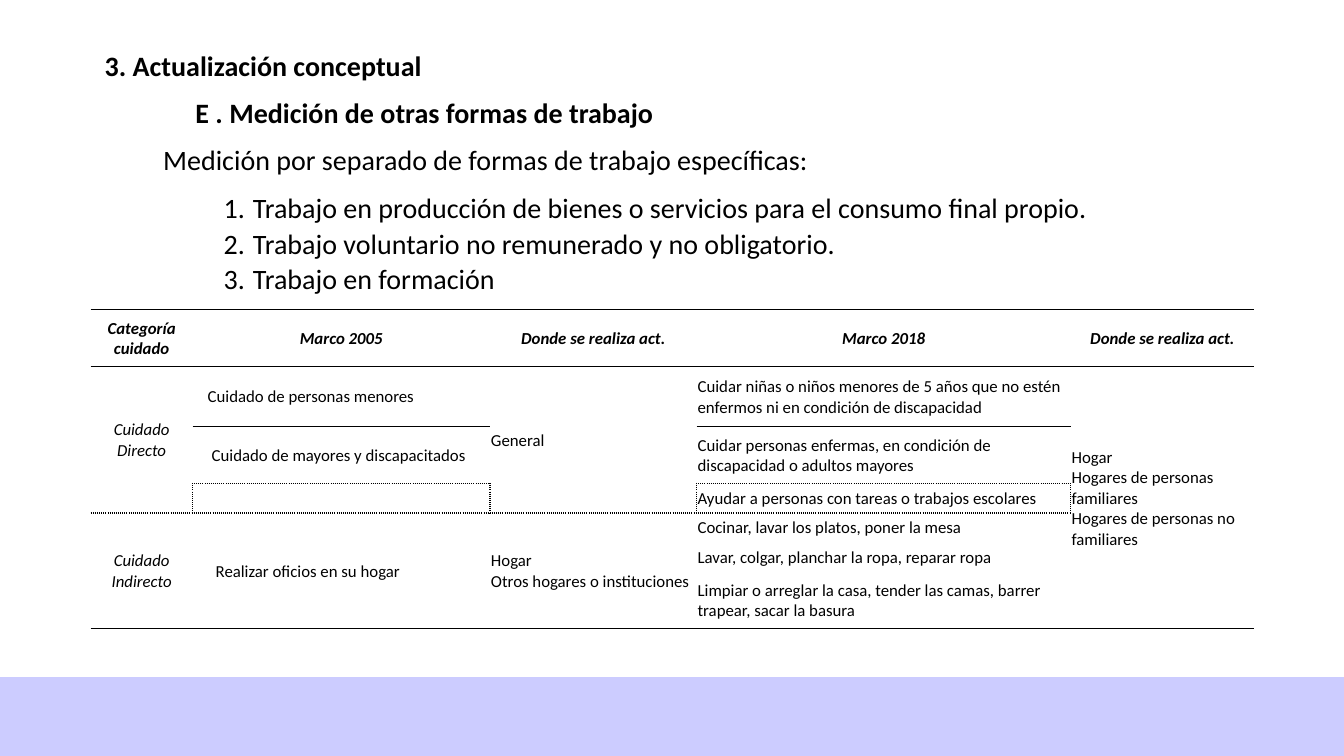
import pptx
import pptx.util
import pptx.dml.color
import pptx.enum.shapes
import pptx.enum.text
import pptx.oxml.ns
from lxml import etree

Inches, Pt = pptx.util.Inches, pptx.util.Pt
ALIGN = pptx.enum.text.PP_ALIGN
BLACK = pptx.dml.color.RGBColor(0x00, 0x00, 0x00)
LAVENDER = pptx.dml.color.RGBColor(0xCC, 0xCC, 0xFF)
FONT = "Calibri"
NO_TABLE_STYLE = "{2D5ABB26-0587-4C30-8999-92F81FD0307C}"
WIDTH, HEIGHT = 13.33, 7.5

# text, bold, left margin, first-line indent, space after, numbered
OUTLINE = [
    ("3. Actualización conceptual", True, 0, 0, 8, False),
    ("E . Medición de otras formas de trabajo", True, 0.9, 0, 8, False),
    ("Medición por separado de formas de trabajo específicas:", False, 0.58, 0, 8, False),
    ("Trabajo en producción de bienes o servicios para el consumo final propio.",
     False, 1.47, -0.29, 0, True),
    ("Trabajo voluntario no remunerado y no obligatorio.", False, 1.47, -0.29, 0, True),
    ("Trabajo en formación", False, 1.47, -0.29, 8, True),
]

COLUMNS = [1.01, 2.95, 2.05, 3.71, 1.82]
ROWS = [0.57, 0.59, 0.57, 0.29, 0.29, 0.29, 0.57]
CELLS = [
    ["Categoría cuidado", "Marco 2005", "Donde se realiza act.", "Marco 2018",
     "Donde se realiza act."],
    ["Cuidado Directo", "Cuidado de personas menores", "General",
     "Cuidar niñas o niños menores de 5 años que no estén enfermos ni en condición de discapacidad",
     "Hogar\nHogares de personas familiares\nHogares de personas no familiares"],
    ["", "Cuidado de mayores y discapacitados", "",
     "Cuidar personas enfermas, en condición de discapacidad o adultos mayores", ""],
    ["", "", "", "Ayudar a personas con tareas o trabajos escolares", ""],
    ["Cuidado Indirecto", "Realizar oficios en su hogar",
     "Hogar\nOtros hogares o instituciones", "Cocinar, lavar los platos, poner la mesa", ""],
    ["", "", "", "Lavar, colgar, planchar la ropa, reparar ropa", ""],
    ["", "", "", "Limpiar o arreglar la casa, tender las camas, barrer trapear, sacar la basura", ""],
]
MERGES = {(1, 0): 3, (1, 2): 3, (1, 4): 6, (4, 0): 3, (4, 1): 3, (4, 2): 3}
LEFT_MARGINS = {(1, 1): 0.15, (2, 1): 0.19, (4, 1): 0.23}
# row boundary, columns, dash
HORIZONTAL_RULES = [
    (0, range(5), "solid"),
    (1, range(5), "solid"),
    (3, (1, 3), "dot"),
    (4, (0, 2), "dot"),
    (7, range(5), "solid"),
]
DOTTED_LEFT = [(3, 1), (3, 3)]


def add_run(paragraph, text, size, bold=False, italic=False):
    run = paragraph.add_run()
    run.text = text
    run.font.name, run.font.size = FONT, Pt(size)
    run.font.bold, run.font.italic = bold, italic
    run.font.color.rgb = BLACK


def add_element(parent, tag, **attributes):
    return etree.SubElement(parent, pptx.oxml.ns.qn(tag), attributes)


def add_footer(slide):
    top = 6.72
    band = slide.shapes.add_shape(
        pptx.enum.shapes.MSO_SHAPE.RECTANGLE,
        0, Inches(top), Inches(WIDTH), Inches(HEIGHT - top))
    band.shadow.inherit = False
    band.fill.solid()
    band.fill.fore_color.rgb = LAVENDER
    band.line.color.rgb = LAVENDER
    band.line.width = Pt(1)


def add_outline(slide):
    box = slide.shapes.add_textbox(Inches(0.94), Inches(0.41), Inches(11.51), Inches(2.58))
    frame = box.text_frame
    frame.word_wrap = True
    frame.auto_size = pptx.enum.text.MSO_AUTO_SIZE.SHAPE_TO_FIT_TEXT
    for index, (text, bold, margin, indent, after, numbered) in enumerate(OUTLINE):
        paragraph = frame.add_paragraph() if index else frame.paragraphs[0]
        paragraph.alignment = ALIGN.JUSTIFY
        paragraph.line_spacing = 1.07
        paragraph.space_after = Pt(after)
        properties = paragraph._p.get_or_add_pPr()
        properties.set("marL", str(Inches(margin)))
        properties.set("indent", str(Inches(indent)))
        if numbered:
            add_element(properties, "a:buFont", typeface=FONT)
            add_element(properties, "a:buAutoNum", type="arabicPeriod")
        add_run(paragraph, text, 20, bold)


def collect_borders():
    borders = {}
    for boundary, columns, dash in HORIZONTAL_RULES:
        for column in columns:
            if boundary < len(ROWS):
                borders.setdefault((boundary, column), {})["a:lnT"] = dash
            if boundary > 0:
                above = boundary - 1
                borders.setdefault((above, column), {})["a:lnB"] = dash
                for (start, merged), span in MERGES.items():
                    if merged == column and start + span == boundary:
                        borders.setdefault((start, column), {})["a:lnB"] = dash
    for position in DOTTED_LEFT:
        borders.setdefault(position, {})["a:lnL"] = "dot"
    return borders


def draw_borders(cell, sides):
    properties = cell._tc.get_or_add_tcPr()
    for side in ("a:lnL", "a:lnT", "a:lnB"):
        if side in sides:
            line = add_element(properties, side, w=str(Pt(1)))
            add_element(add_element(line, "a:solidFill"), "a:srgbClr", val=str(BLACK))
            add_element(line, "a:prstDash", val=sides[side])


def fill_cell(cell, text, row, column):
    cell.vertical_anchor = pptx.enum.text.MSO_ANCHOR.MIDDLE
    cell.margin_left = Inches(LEFT_MARGINS.get((row, column), 0.01))
    cell.margin_right = cell.margin_top = Inches(0.01)
    cell.margin_bottom = 0
    paragraph = cell.text_frame.paragraphs[0]
    if not text:
        add_element(paragraph._p, "a:endParaRPr", sz="1200")
        return
    heading = row == 0
    emphasised = heading or column == 0
    paragraph.alignment = ALIGN.CENTER if emphasised else ALIGN.LEFT
    for index, line in enumerate(text.split("\n")):
        if index:
            paragraph.add_line_break()
        add_run(paragraph, line, 12, heading, emphasised)


def add_care_table(slide):
    frame = slide.shapes.add_table(
        len(ROWS), len(COLUMNS), Inches(0.9), Inches(3.07),
        Inches(sum(COLUMNS)), Inches(sum(ROWS)))
    table = frame.table
    table.first_row = table.horz_banding = False
    table._tbl.tblPr.find(pptx.oxml.ns.qn("a:tableStyleId")).text = NO_TABLE_STYLE
    for column, width in zip(table.columns, COLUMNS):
        column.width = Inches(width)
    for row, height in zip(table.rows, ROWS):
        row.height = Inches(height)
    for (row, column), span in MERGES.items():
        table.cell(row, column).merge(table.cell(row + span - 1, column))
    borders = collect_borders()
    for row, texts in enumerate(CELLS):
        for column, text in enumerate(texts):
            cell = table.cell(row, column)
            fill_cell(cell, text, row, column)
            draw_borders(cell, borders.get((row, column), {}))
            cell.fill.background()


def main():
    presentation = pptx.Presentation()
    presentation.slide_width = Inches(WIDTH)
    presentation.slide_height = Inches(HEIGHT)
    slide = presentation.slides.add_slide(presentation.slide_layouts[6])
    add_footer(slide)
    add_outline(slide)
    add_care_table(slide)
    presentation.save("out.pptx")


if __name__ == "__main__":
    main()
